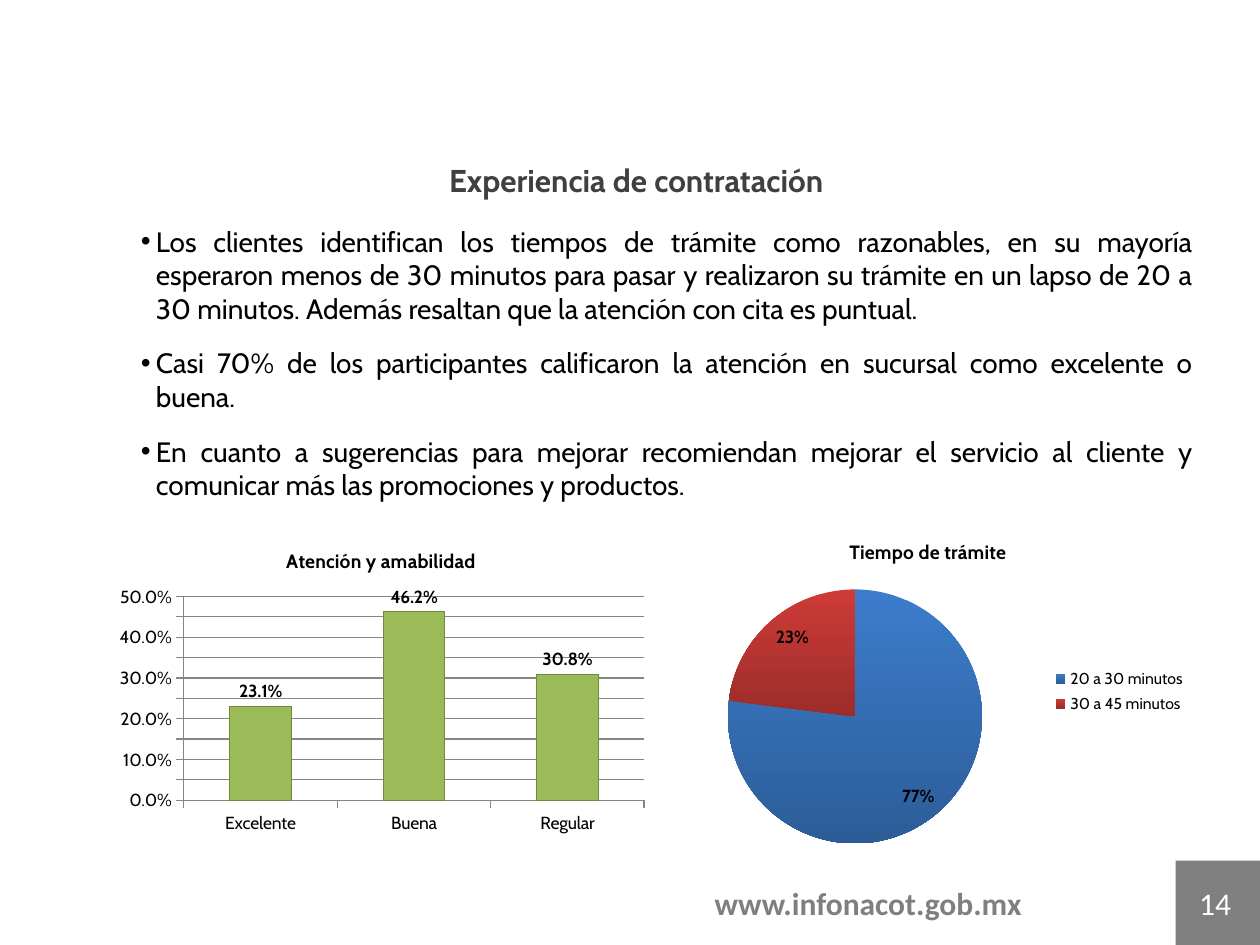
from dataclasses import dataclass

from lxml.etree import SubElement
from pptx import Presentation
from pptx.chart.data import CategoryChartData
from pptx.dml.color import RGBColor
from pptx.enum.chart import XL_CHART_TYPE as ChartType
from pptx.enum.chart import XL_LABEL_POSITION as LabelPosition
from pptx.enum.chart import XL_LEGEND_POSITION as LegendPosition
from pptx.enum.chart import XL_TICK_MARK as TickMark
from pptx.enum.shapes import MSO_SHAPE as Shape
from pptx.enum.text import MSO_ANCHOR as Anchor
from pptx.enum.text import PP_ALIGN as Align
from pptx.oxml.ns import qn
from pptx.util import Inches, Pt


@dataclass(frozen=True)
class Theme:
    body_font: str = "Cabin"
    footer_font: str = "Calibri"
    black: str = "000000"
    heading: str = "404040"
    footer: str = "7F7F7F"
    badge: str = "808080"
    white: str = "FFFFFF"
    grid: str = "868686"
    bar: str = "9BBB59"
    bar_edge: str = "71893F"
    slices: tuple = (("3D7CCB", "2C5D98"), ("CE3B37", "9B2D2A"))
    heading_size: int = 18
    body_size: int = 16
    chart_title_size: int = 11
    chart_size: int = 10
    legend_size: int = 9


@dataclass(frozen=True)
class Area:
    left: float
    top: float
    width: float
    height: float

    def lengths(self):
        return [Inches(n) for n in (self.left, self.top, self.width, self.height)]


@dataclass(frozen=True)
class ChartSpec:
    kind: ChartType
    area: Area
    plot: Area  # fractions of the chart area
    title: str
    categories: tuple
    values: tuple
    number_format: str
    label_position: LabelPosition


THEME = Theme()
FINDINGS = (
    "Los clientes identifican los tiempos de trámite como razonables, en su mayoría "
    "esperaron menos de 30 minutos para pasar y realizaron su trámite en un lapso de "
    "20 a 30 minutos. Además resaltan que la atención con cita es puntual.",
    "Casi 70% de los participantes calificaron la atención en sucursal como excelente o buena.",
    "En cuanto a sugerencias para mejorar recomiendan mejorar el servicio al cliente y "
    "comunicar más las promociones y productos.",
)
WAITING = ChartSpec(
    ChartType.PIE, Area(5.22, 4.14, 4.29, 2.69), Area(0.13, 0.2, 0.47, 0.75),
    "Tiempo de trámite", ("20 a 30 minutos", "30 a 45 minutos"), (77, 23),
    "0%", LabelPosition.INSIDE_END,
)
SERVICE = ChartSpec(
    ChartType.COLUMN_CLUSTERED, Area(0.85, 4.22, 4.35, 2.45), Area(0.14, 0.21, 0.84, 0.66),
    "Atención y amabilidad", ("Excelente", "Buena", "Regular"), (0.231, 0.462, 0.308),
    "0.0%", LabelPosition.OUTSIDE_END,
)


def rgb(color: str) -> RGBColor:
    return RGBColor.from_string(color)


def style_font(font, size: int, color: str = THEME.black, bold: bool = False,
               name: str = THEME.body_font) -> None:
    font.size, font.bold, font.name = Pt(size), bold, name
    font.color.rgb = rgb(color)


def add_bullet(para) -> None:
    properties = para._p.get_or_add_pPr()
    properties.set("marL", str(Inches(0.31)))
    properties.set("indent", str(Inches(-0.12)))
    SubElement(properties, qn("a:buFont")).set("typeface", "Arial")
    SubElement(properties, qn("a:buChar")).set("char", "•")


def add_text(page, area: Area, *texts: str, align=Align.CENTER, anchor=Anchor.TOP,
             bullets: bool = False, gap: int = 0, **font) -> None:
    frame = page.shapes.add_textbox(*area.lengths()).text_frame
    frame.word_wrap = True
    frame.vertical_anchor = anchor
    for index, text in enumerate(texts):
        para = frame.paragraphs[0] if index == 0 else frame.add_paragraph()
        para.alignment = align
        para.space_before = Pt(gap if index else 0)
        para.space_after = Pt(gap)
        if bullets:
            add_bullet(para)
        span = para.add_run()
        span.text = text
        style_font(span.font, **font)


def place_plot(chart, plot: Area) -> None:
    """Fix the inner plot area at fractions of the chart area."""
    plot_area = chart._chartSpace.chart.plotArea
    for old in plot_area.findall(qn("c:layout")):
        plot_area.remove(old)
    layout = plot_area.makeelement(qn("c:layout"))
    plot_area.insert(0, layout)
    manual = SubElement(layout, qn("c:manualLayout"))
    settings = (("layoutTarget", "inner"), ("xMode", "edge"), ("yMode", "edge"),
                ("x", plot.left), ("y", plot.top), ("w", plot.width), ("h", plot.height))
    for tag, value in settings:
        SubElement(manual, qn(f"c:{tag}")).set("val", str(value))


def add_chart(page, spec: ChartSpec):
    data = CategoryChartData(number_format=spec.number_format)
    data.categories = spec.categories
    data.add_series(spec.title, spec.values)
    chart = page.shapes.add_chart(spec.kind, *spec.area.lengths(), data).chart
    style_font(chart.font, THEME.chart_size)
    chart.has_legend = False
    chart.has_title = True
    title = chart.chart_title.text_frame
    title.text = spec.title
    style_font(title.paragraphs[0].runs[0].font, THEME.chart_title_size, bold=True)
    place_plot(chart, spec.plot)
    labels = chart.plots[0].series[0].data_labels
    labels.number_format = spec.number_format
    labels.number_format_is_linked = False
    labels.position = spec.label_position
    style_font(labels.font, THEME.chart_size, bold=True)
    return chart


def add_pie(page, spec: ChartSpec) -> None:
    chart = add_chart(page, spec)
    series = chart.plots[0].series[0]
    series.data_labels.show_percentage = True
    series.data_labels.show_value = False
    for index, colors in enumerate(THEME.slices):
        fill = series.points[index].format.fill
        fill.gradient()
        fill.gradient_angle = 270
        for stop, color in zip(fill.gradient_stops, colors):
            stop.color.rgb = rgb(color)
    chart.has_legend = True
    chart.legend.position = LegendPosition.RIGHT
    chart.legend.include_in_layout = False
    style_font(chart.legend.font, THEME.legend_size)


def add_columns(page, spec: ChartSpec) -> None:
    chart = add_chart(page, spec)
    plot = chart.plots[0]
    plot.gap_width = 150
    plot.vary_by_categories = False
    series = plot.series[0]
    series.data_labels.show_value = True
    series.format.fill.solid()
    series.format.fill.fore_color.rgb = rgb(THEME.bar)
    series.format.line.color.rgb = rgb(THEME.bar_edge)
    values = chart.value_axis
    values.minimum_scale, values.maximum_scale, values.major_unit = 0, 0.5, 0.05
    values.tick_labels.number_format = spec.number_format
    values.tick_labels.number_format_is_linked = False
    values.has_major_gridlines = True
    for axis in (values, chart.category_axis):
        axis.major_tick_mark = TickMark.OUTSIDE
        axis.format.line.color.rgb = rgb(THEME.grid)
    values.major_gridlines.format.line.color.rgb = rgb(THEME.grid)


def add_footer(page) -> None:
    footer = {"size": THEME.heading_size, "name": THEME.footer_font}
    add_text(page, Area(4.45, 6.97, 4.88, 0.4), "www.infonacot.gob.mx",
             color=THEME.footer, bold=True, **footer)
    badge = page.shapes.add_shape(Shape.RECTANGLE, *Area(9.33, 6.83, 0.67, 0.67).lengths())
    badge.shadow.inherit = False
    badge.fill.solid()
    badge.fill.fore_color.rgb = rgb(THEME.badge)
    badge.line.fill.background()
    add_text(page, Area(9.33, 6.83, 0.63, 0.67), "14", anchor=Anchor.MIDDLE,
             color=THEME.white, **footer)


def main() -> None:
    deck = Presentation()
    deck.slide_width, deck.slide_height = Inches(10), Inches(7.5)
    page = deck.slides.add_slide(deck.slide_layouts[6])
    add_footer(page)
    add_text(page, Area(0.83, 1.73, 8.74, 2.32), *FINDINGS, align=Align.JUSTIFY,
             bullets=True, gap=6, size=THEME.body_size)
    add_text(page, Area(1.82, 1.23, 6.46, 0.4), "Experiencia de contratación",
             size=THEME.heading_size, color=THEME.heading, bold=True)
    add_pie(page, WAITING)
    add_columns(page, SERVICE)
    deck.save("out.pptx")


if __name__ == "__main__":
    main()
